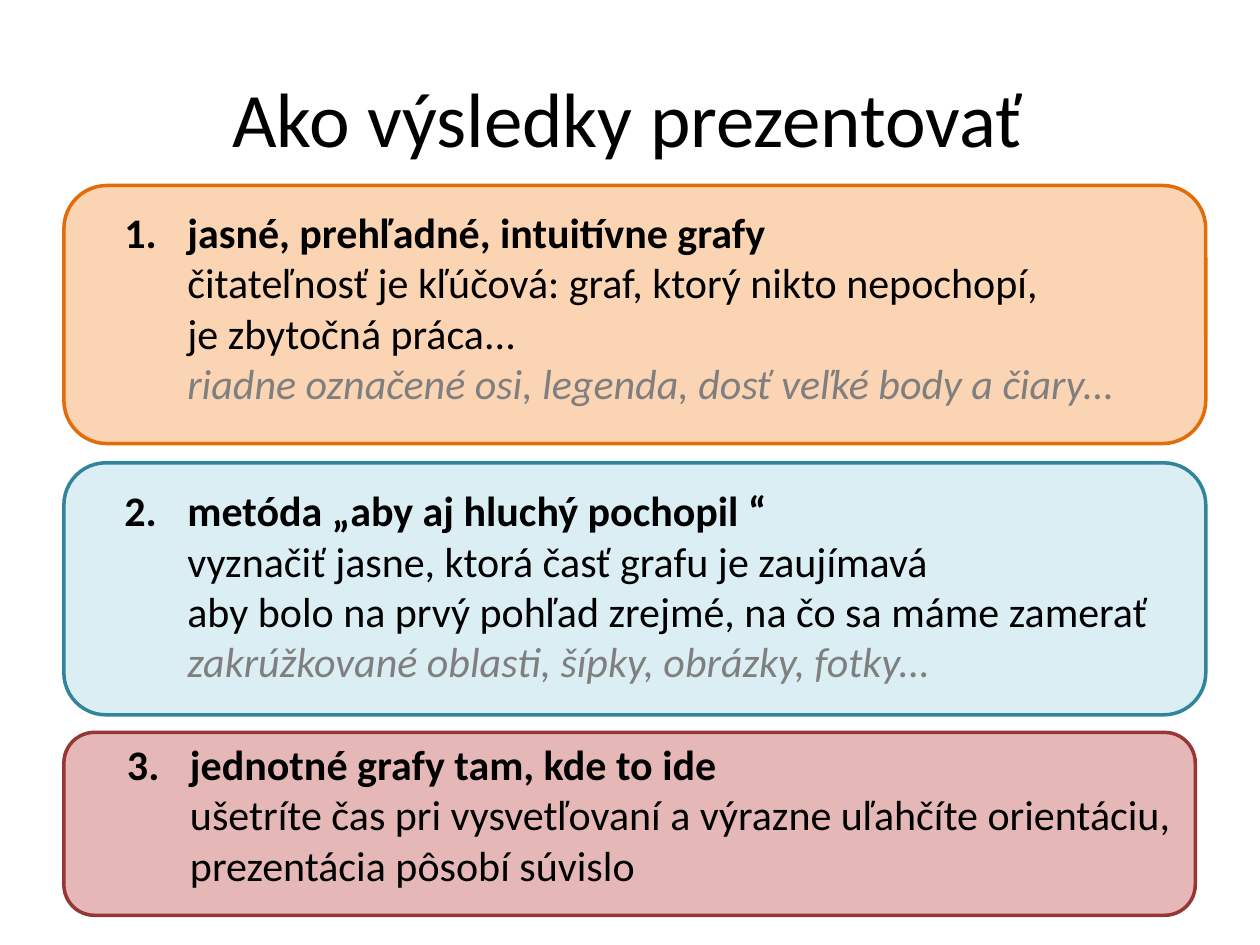
from lxml.etree import SubElement
from pptx import Presentation
from pptx.dml.color import RGBColor
from pptx.enum.shapes import MSO_SHAPE
from pptx.enum.text import MSO_ANCHOR, PP_ALIGN
from pptx.oxml.ns import qn
from pptx.util import Pt

BLACK, GREY = "000000", "7F7F7F"
TEXT_INDENT = 36

ADVICE = [
    {
        "box": (36.5, 106, 652.5, 147.5),
        "text_offset": (27.5, 8.5),
        "fill": "FBD4B4",
        "border": "E36C09",
        "heading": "jasné, prehľadné, intuitívne grafy",
        "details": [
            "čitateľnosť je kľúčová: graf, ktorý nikto nepochopí,",
            "je zbytočná práca...",
        ],
        "examples": "riadne označené osi, legenda, dosť veľké body a čiary...",
    },
    {
        "box": (36.5, 264.5, 652.5, 144),
        "text_offset": (27.5, 9),
        "fill": "DAEEF3",
        "border": "31859B",
        "heading": "metóda „aby aj hluchý pochopil “",
        "details": [
            "vyznačiť jasne, ktorá časť grafu je zaujímavá",
            "aby bolo na prvý pohľad zrejmé, na čo sa máme zamerať",
        ],
        "examples": "zakrúžkované oblasti, šípky, obrázky, fotky...",
    },
    {
        "box": (36.5, 418.5, 646.5, 104.5),
        "text_offset": (29, 0),
        "fill": "E5B8B7",
        "border": "953734",
        "heading": "jednotné grafy tam, kde to ide",
        "details": [
            "ušetríte čas pri vysvetľovaní a výrazne uľahčíte orientáciu, "
            "prezentácia pôsobí súvislo",
        ],
        "examples": None,
    },
]


def paint(target, color):
    """Give a fill or line format a solid hex colour."""
    target.fill.solid()
    target.fill.fore_color.rgb = RGBColor.from_string(color)


def write(paragraph, text, size=24, color=BLACK, bold=False, italic=False,
          align=PP_ALIGN.LEFT):
    """Add formatted text to a paragraph."""
    paragraph.alignment = align
    run = paragraph.add_run()
    run.text = text
    run.font.name = "Calibri"
    run.font.size = Pt(size)
    run.font.bold = bold
    run.font.italic = italic
    paint(run.font, color)


def indent(paragraph, number=None):
    """Indent a paragraph, hanging an automatic number if one is given."""
    properties = paragraph._p.get_or_add_pPr()
    properties.set("marL", str(Pt(TEXT_INDENT)))
    properties.set("indent", str(Pt(-TEXT_INDENT if number else 0)))
    if number:
        bullet_color = SubElement(properties, qn("a:buClr"))
        SubElement(bullet_color, qn("a:srgbClr"), val=BLACK)
        SubElement(properties, qn("a:buFont"), typeface="+mj-lt")
        SubElement(properties, qn("a:buAutoNum"), type="arabicPeriod",
                   startAt=str(number))


def add_title(slide, box, text):
    """Place the centred slide title in its box."""
    title = slide.shapes.add_textbox(*map(Pt, box)).text_frame
    title.word_wrap = True
    title.vertical_anchor = MSO_ANCHOR.MIDDLE
    write(title.paragraphs[0], text, size=44, align=PP_ALIGN.CENTER)


def add_advice(slide, number, box, text_offset, fill, border, heading, details,
               examples):
    """Place a rounded panel with its numbered advice."""
    panel = slide.shapes.add_shape(MSO_SHAPE.ROUNDED_RECTANGLE, *map(Pt, box))
    panel.shadow.inherit = False
    paint(panel, fill)
    paint(panel.line, border)
    panel.line.width = Pt(2)

    left, top = box[0] + text_offset[0], box[1] + text_offset[1]
    advice = slide.shapes.add_textbox(Pt(left), Pt(top), Pt(611.5), Pt(124)).text_frame
    advice.word_wrap = True
    advice.vertical_anchor = MSO_ANCHOR.TOP
    write(advice.paragraphs[0], heading, bold=True)
    indent(advice.paragraphs[0], number)
    for detail in details:
        line = advice.add_paragraph()
        write(line, detail)
        indent(line)
    if examples:
        line = advice.add_paragraph()
        write(line, examples, color=GREY, italic=True)
        indent(line)


def main():
    """Build and save the slide."""
    presentation = Presentation()
    presentation.slide_width, presentation.slide_height = Pt(720), Pt(540)
    slide = presentation.slides.add_slide(presentation.slide_layouts[6])
    add_title(slide, (6, 21.5, 705.5, 90), "Ako výsledky prezentovať")
    for number, advice in enumerate(ADVICE, start=1):
        add_advice(slide, number, **advice)
    presentation.save("out.pptx")


if __name__ == "__main__":
    main()
